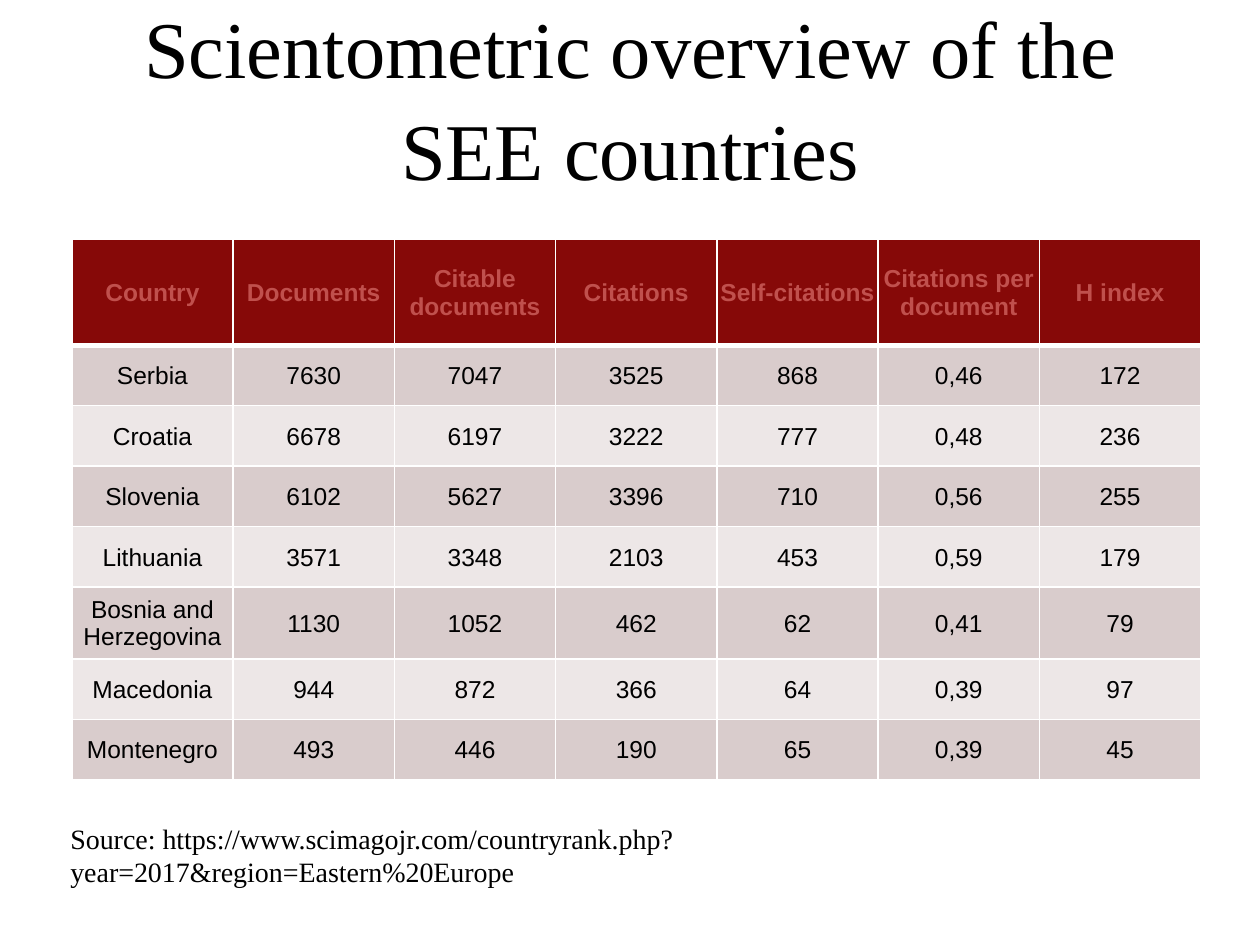
from pptx import Presentation
from pptx.dml.color import RGBColor
from pptx.enum.text import MSO_ANCHOR, MSO_AUTO_SIZE, PP_ALIGN
from pptx.oxml import parse_xml
from pptx.oxml.ns import nsdecls
from pptx.util import Inches, Pt

HEADING = "Scientometric overview of the SEE countries"
SOURCE = "Source: https://www.scimagojr.com/countryrank.php?year=2017&region=Eastern%20Europe"
INDICATORS = ["Country", "Documents", "Citable documents", "Citations",
              "Self-citations", "Citations per document", "H index"]
COUNTRIES = [
    ("Serbia", "7630", "7047", "3525", "868", "0,46", "172"),
    ("Croatia", "6678", "6197", "3222", "777", "0,48", "236"),
    ("Slovenia", "6102", "5627", "3396", "710", "0,56", "255"),
    ("Lithuania", "3571", "3348", "2103", "453", "0,59", "179"),
    ("Bosnia and Herzegovina", "1130", "1052", "462", "62", "0,41", "79"),
    ("Macedonia", "944", "872", "366", "64", "0,39", "97"),
    ("Montenegro", "493", "446", "190", "65", "0,39", "45"),
]
COLORS = {"header": "860908", "header_text": "C0504D", "odd": "D9CCCC",
          "even": "EDE7E7", "text": "000000", "border": "FFFFFF"}
HEADER_HEIGHT, ROW_HEIGHT, TWO_LINE_HEIGHT = 0.84, 0.48, 0.57


def format_text(frame, font_name, size, color, bold=False, align=PP_ALIGN.LEFT):
    for paragraph in frame.paragraphs:
        paragraph.alignment = align
        for run in paragraph.runs:
            run.font.name = font_name
            run.font.size = Pt(size)
            run.font.bold = bold
            run.font.color.rgb = RGBColor.from_string(COLORS[color])


def add_borders(cell, bottom_width):
    properties = cell._tc.get_or_add_tcPr()
    widths = {"lnL": 1, "lnR": 1, "lnT": 1, "lnB": bottom_width}
    for position, (side, width) in enumerate(widths.items()):
        properties.insert(position, parse_xml(
            f'<a:{side} {nsdecls("a")} w="{Pt(width)}"><a:solidFill>'
            f'<a:srgbClr val="{COLORS["border"]}"/></a:solidFill></a:{side}>'))


def fill_cell(cell, words, row):
    is_header = row == 0
    cell.text_frame.text = words
    cell.vertical_anchor = MSO_ANCHOR.MIDDLE
    cell.margin_left = cell.margin_right = cell.margin_top = Inches(0.01)
    cell.margin_bottom = 0
    band = "header" if is_header else "odd" if row % 2 else "even"
    cell.fill.solid()
    cell.fill.fore_color.rgb = RGBColor.from_string(COLORS[band])
    format_text(cell.text_frame, "Arial", 14, "header_text" if is_header else "text",
                is_header, PP_ALIGN.CENTER)
    add_borders(cell, 3 if is_header else 1)


def add_heading(slide):
    heading = slide.shapes.title
    heading.left, heading.top = Inches(1), Inches(0.28)
    heading.width, heading.height = Inches(8), Inches(0.95)
    frame = heading.text_frame
    frame.text = HEADING
    frame.word_wrap = True
    frame.auto_size = MSO_AUTO_SIZE.NONE
    frame.vertical_anchor = MSO_ANCHOR.MIDDLE
    frame.paragraphs[0].line_spacing = 1.05
    format_text(frame, "Times New Roman", 46, "text", align=PP_ALIGN.CENTER)


def add_country_table(slide):
    rows = [INDICATORS, *COUNTRIES]
    heights = [HEADER_HEIGHT] + [TWO_LINE_HEIGHT if " " in country[0] else ROW_HEIGHT
                                 for country in COUNTRIES]
    table = slide.shapes.add_table(
        len(rows), len(INDICATORS), Inches(0.57), Inches(1.9),
        Inches(8.96), Inches(sum(heights))).table
    for row, (values, height) in enumerate(zip(rows, heights)):
        table.rows[row].height = Inches(height)
        for column, words in enumerate(values):
            fill_cell(table.cell(row, column), words, row)


def add_source(slide):
    source = slide.shapes.add_textbox(Inches(0.46), Inches(6.47), Inches(8.4), Inches(0.37))
    source.text_frame.text = SOURCE
    source.text_frame.word_wrap = True
    format_text(source.text_frame, "Times New Roman", 16, "text")


def main():
    deck = Presentation()
    deck.slide_width, deck.slide_height = Inches(10), Inches(7.5)
    slide = deck.slides.add_slide(deck.slide_layouts[5])
    add_heading(slide)
    add_country_table(slide)
    add_source(slide)
    deck.save("out.pptx")


if __name__ == "__main__":
    main()
